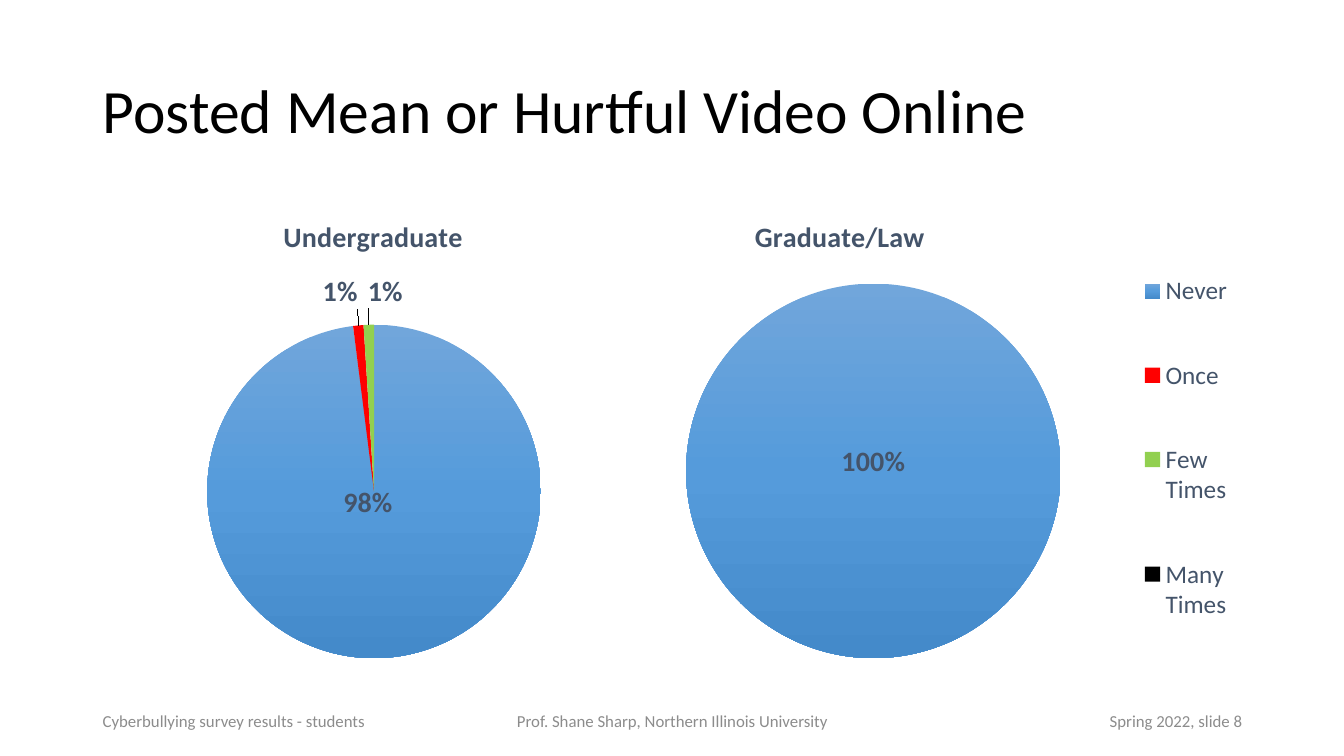
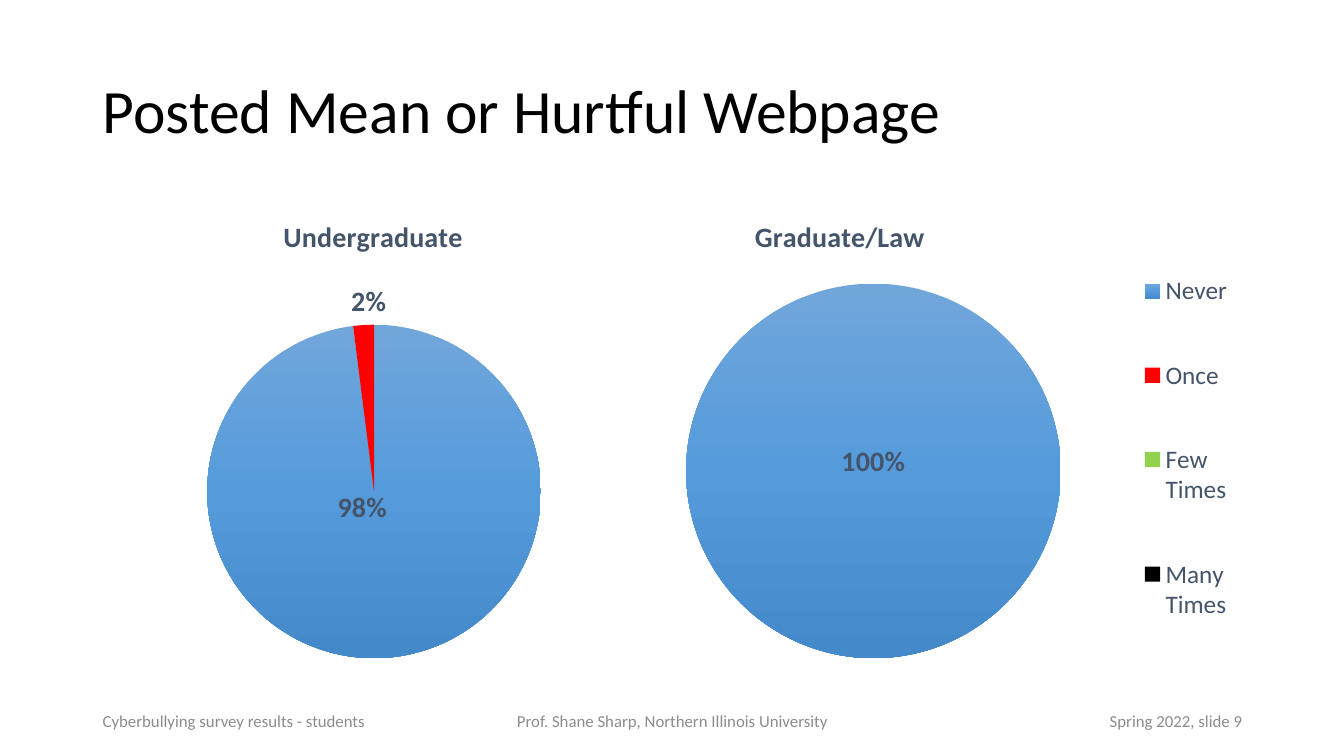
from dataclasses import dataclass

import pptx
import pptx.chart.data
import pptx.dml.color
import pptx.enum.chart
import pptx.enum.text
import pptx.oxml
import pptx.oxml.ns
import pptx.util

Inches = pptx.util.Inches
Align = pptx.enum.text.PP_ALIGN
LabelAt = pptx.enum.chart.XL_LABEL_POSITION
qn = pptx.oxml.ns.qn


@dataclass(frozen=True)
class Theme:
    font: str = "Calibri"
    title: str = "000000"
    chart_text: str = "44546A"
    footer: str = "8C8C8C"
    never: tuple = ((0, "71A6DB"), (50, "559BDB"), (100, "448ACA"))
    other_answers: tuple = ("FF0000", "92D050", "000000")
    title_size: int = 44
    heading_size: int = 20
    legend_size: int = 18
    footer_size: int = 12


THEME = Theme()
ANSWERS = ["Never", "Once", "Few Times", "Many Times"]
TITLE_BOX = (0.92, 0.4, 11.5, 1.45)

GROUPS = {
    "Undergraduate": {
        "box": (0.92, 2, 5.58, 5.09),
        "categories": ["1", "2", "3", "4"],
        "heading": (0.33, 0.02),
        "pie": (0.2, 0.24, 0.6, 0.65),
        "legend": None,
    },
    "Graduate/Law": {
        "box": (5.95, 2, 6.46, 5.09),
        "categories": ANSWERS,
        "heading": (0.23, 0.02),
        "pie": (0.13, 0.16, 0.58, 0.73),
        "legend": (0.82, 0.04, 0.16, 0.88),
    },
}

QUESTIONS = [
    {
        "title": "Posted Mean or Hurtful Video Online",
        "number": 8,
        "shares": {"Undergraduate": (98, 1, 1, 0), "Graduate/Law": (100, 0, 0, 0)},
        "label_shifts": {
            "Undergraduate": ((-0.02, -0.14), (0, -0.02), (0.03, -0.02)),
            "Graduate/Law": ((0, -0.2),),
        },
    },
    {
        "title": "Posted Mean or Hurtful Webpage",
        "number": 9,
        "shares": {"Undergraduate": (98, 2, 0, 0), "Graduate/Law": (100, 0, 0, 0)},
        "label_shifts": {
            "Undergraduate": ((-0.03, -0.13), (0.01, 0)),
            "Graduate/Law": ((0, -0.2),),
        },
    },
]

FOOTERS = [
    ("Cyberbullying survey results - students", 0.92, 3, Align.LEFT),
    ("Prof. Shane Sharp, Northern Illinois University", 4.42, 4.5, Align.CENTER),
    ("Spring 2022, slide {number}", 9.42, 3, Align.RIGHT),
]


def style(font, size, color, bold=False):
    font.name = THEME.font
    font.size = pptx.util.Pt(size)
    font.bold = bold
    font.color.rgb = pptx.dml.color.RGBColor.from_string(color)


def append(parent, tag, value=None):
    child = parent.makeelement(qn(tag), {} if value is None else {"val": str(value)})
    parent.append(child)
    return child


def set_layout(part, index, numbers, inner=False, absolute=True):
    for old in part.findall(qn("c:layout")):
        part.remove(old)
    layout = part.makeelement(qn("c:layout"), {})
    part.insert(index, layout)
    manual = append(layout, "c:manualLayout")
    if inner:
        append(manual, "c:layoutTarget", "inner")
    if absolute:
        append(manual, "c:xMode", "edge")
        append(manual, "c:yMode", "edge")
    for key, number in zip("xywh", numbers):
        append(manual, f"c:{key}", number)


def fill_never(point):
    point.format.fill.gradient()
    gradient = point.format._element.find(f".//{qn('a:gradFill')}")
    stops = gradient.find(qn("a:gsLst"))
    for old in list(stops):
        stops.remove(old)
    for position, color in THEME.never:
        stop = append(stops, "a:gs")
        stop.set("pos", str(position * 1000))
        append(stop, "a:srgbClr", color)
    gradient.find(qn("a:lin")).set("ang", "5400000")


def fill_answers(series):
    for index in range(len(ANSWERS)):
        point = series.points[index]
        if index == 0:
            fill_never(point)
        else:
            point.format.fill.solid()
            point.format.fill.fore_color.rgb = pptx.dml.color.RGBColor.from_string(
                THEME.other_answers[index - 1]
            )
        point.format.line.fill.background()


def label_answers(series, shares, shifts):
    labels = series.data_labels
    style(labels.font, THEME.heading_size, THEME.chart_text, True)
    labels.number_format = "0%"
    labels.number_format_is_linked = False
    labels.show_percentage = True
    labels.show_value = False
    for index, share in enumerate(shares):
        label = series.points[index].data_label
        style(label.font, THEME.heading_size, THEME.chart_text, True)
        label.position = LabelAt.OUTSIDE_END if index else LabelAt.CENTER
        entry = labels._element.findall(qn("c:dLbl"))[index]
        if share:
            entry.find(qn("c:showVal")).set("val", "0")
            entry.find(qn("c:showPercent")).set("val", "1")
            set_layout(entry, 1, shifts[index], absolute=False)
        else:
            for child in list(entry)[1:]:
                entry.remove(child)
            append(entry, "c:delete", 1)


def add_pie(slide, heading, group, shares, shifts):
    answers = pptx.chart.data.CategoryChartData()
    answers.categories = group["categories"]
    answers.add_series("Series 1", shares)
    chart = slide.shapes.add_chart(
        pptx.enum.chart.XL_CHART_TYPE.PIE, *map(Inches, group["box"]), answers
    ).chart
    style(chart.font, 10, THEME.title)
    chart.has_title = True
    chart.chart_title.text_frame.text = heading
    heading_run = chart.chart_title.text_frame.paragraphs[0].runs[0]
    style(heading_run.font, THEME.heading_size, THEME.chart_text, True)
    set_layout(chart.chart_title._element, 1, group["heading"])
    set_layout(chart._chartSpace.chart.plotArea, 0, group["pie"], inner=True)

    pie = chart.plots[0]
    pie.vary_by_categories = True
    fill_answers(pie.series[0])
    label_answers(pie.series[0], shares, shifts)

    chart.has_legend = group["legend"] is not None
    if chart.has_legend:
        chart.legend.position = pptx.enum.chart.XL_LEGEND_POSITION.RIGHT
        chart.legend.include_in_layout = False
        style(chart.legend.font, THEME.legend_size, THEME.chart_text)
        set_layout(chart.legend._element, 1, group["legend"])


def add_title(slide, wording):
    title = slide.shapes.title
    title.left, title.top, title.width, title.height = map(Inches, TITLE_BOX)
    title.text_frame.text = wording
    title.text_frame.vertical_anchor = pptx.enum.text.MSO_ANCHOR.MIDDLE
    line = title.text_frame.paragraphs[0]
    line.alignment = Align.LEFT
    line.line_spacing = 0.9
    style(line.runs[0].font, THEME.title_size, THEME.title)


def add_footers(slide, number):
    for wording, left, width, alignment in FOOTERS:
        footer = slide.shapes.add_textbox(
            Inches(left), Inches(6.95), Inches(width), Inches(0.4)
        ).text_frame
        footer.word_wrap = True
        footer.vertical_anchor = pptx.enum.text.MSO_ANCHOR.MIDDLE
        footer.text = wording.format(number=number)
        footer.paragraphs[0].alignment = alignment
        style(footer.paragraphs[0].runs[0].font, THEME.footer_size, THEME.footer)


def main():
    deck = pptx.Presentation()
    deck.slide_width, deck.slide_height = Inches(13.33), Inches(7.5)
    for question in QUESTIONS:
        slide = deck.slides.add_slide(deck.slide_layouts[5])
        add_title(slide, question["title"])
        for heading, group in GROUPS.items():
            add_pie(
                slide,
                heading,
                group,
                question["shares"][heading],
                question["label_shifts"][heading],
            )
        add_footers(slide, question["number"])
    deck.save("out.pptx")


if __name__ == "__main__":
    main()
